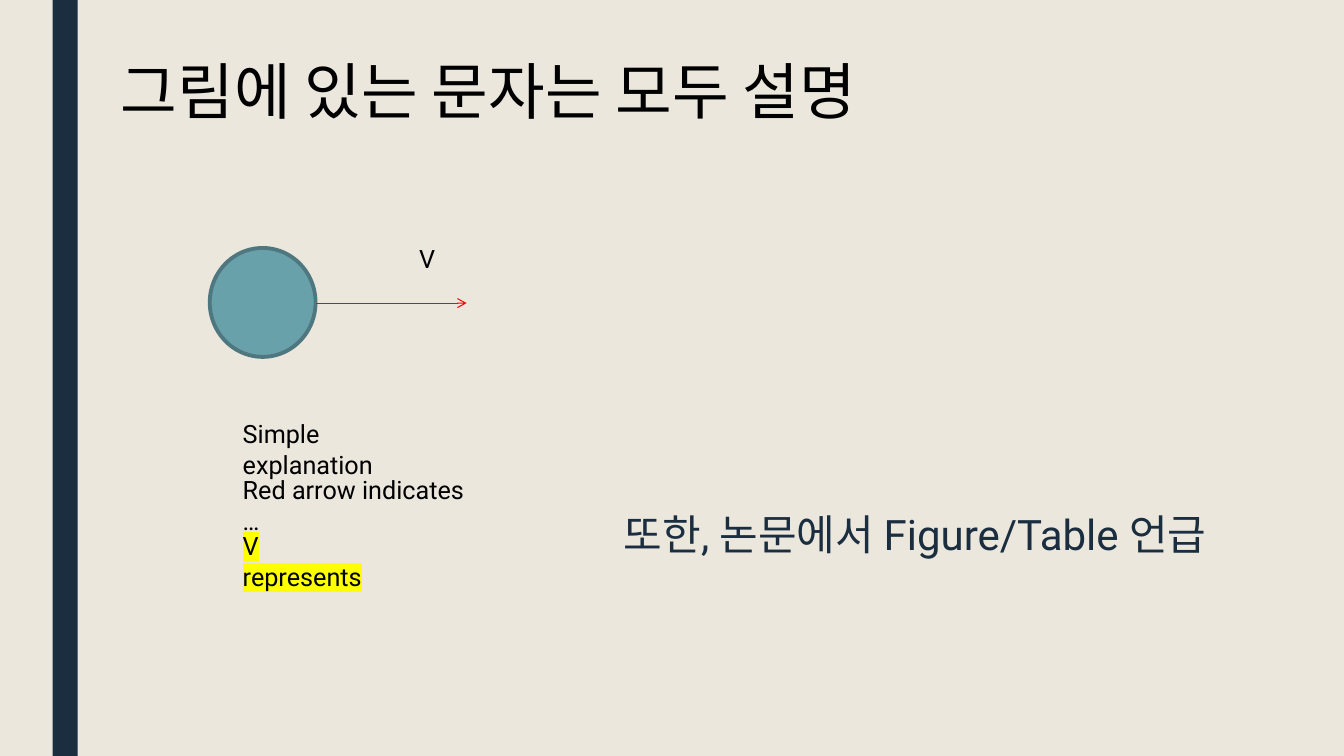
from dataclasses import dataclass

import pptx
import pptx.dml.color
import pptx.enum.shapes
import pptx.enum.text
import pptx.oxml
import pptx.oxml.ns
import pptx.util

Pt = pptx.util.Pt
ANCHOR = pptx.enum.text.MSO_ANCHOR
SHAPE = pptx.enum.shapes.MSO_SHAPE


@dataclass(frozen=True)
class Theme:
    font: str = "Roboto"
    background: str = "EBE7DD"
    navy: str = "1A2E40"
    ink: str = "000000"
    ball: str = "69A1AB"
    ball_edge: str = "4E777F"
    arrow: str = "FF0000"
    highlight: str = "FFFF00"
    heading_size: float = 44
    remark_size: float = 30
    label_size: float = 18


THEME = Theme()


def rgb(value):
    return pptx.dml.color.RGBColor.from_string(value)


def element(tag, content=""):
    return pptx.oxml.parse_xml(
        f"<a:{tag} {pptx.oxml.ns.nsdecls('a')}>{content}</a:{tag}>"
    )


def write(holder, text, size, color, anchor=ANCHOR.TOP, spacing=1.0):
    frame = holder.text_frame
    frame.text = text
    frame.word_wrap = True
    frame.auto_size = pptx.enum.text.MSO_AUTO_SIZE.NONE
    frame.vertical_anchor = anchor
    paragraph = frame.paragraphs[0]
    paragraph.alignment = pptx.enum.text.PP_ALIGN.LEFT
    paragraph.line_spacing = spacing
    run = paragraph.runs[0]
    run.font.name = THEME.font
    run.font.size = Pt(size)
    run.font.color.rgb = rgb(color)
    return run


def add_heading(slide, text):
    heading = slide.shapes.title
    heading.left, heading.top = Pt(79.2), Pt(15.1)
    heading.width, heading.height = Pt(828), Pt(104.4)
    write(heading, text, THEME.heading_size, THEME.ink, ANCHOR.MIDDLE, 0.9)


def add_text(slide, text, left, top, width, height=28.8,
             size=THEME.label_size, color=THEME.ink, spacing=1.0):
    label = slide.shapes.add_textbox(Pt(left), Pt(top), Pt(width), Pt(height))
    return write(label, text, size, color, spacing=spacing)


def highlight(run):
    color = element("highlight", f'<a:srgbClr val="{THEME.highlight}"/>')
    fill = run.font._element.find(pptx.oxml.ns.qn("a:solidFill"))
    fill.addnext(color)


def add_filled(slide, kind, left, top, width, height, fill, edge=None):
    figure = slide.shapes.add_shape(kind, Pt(left), Pt(top), Pt(width), Pt(height))
    figure.shadow.inherit = False
    figure.fill.solid()
    figure.fill.fore_color.rgb = rgb(fill)
    if edge:
        figure.line.color.rgb = rgb(edge)
        figure.line.width = Pt(2.75)
    else:
        figure.line.fill.background()


def add_arrow(slide, start, end, y):
    arrow = slide.shapes.add_connector(
        pptx.enum.shapes.MSO_CONNECTOR.STRAIGHT, Pt(start), Pt(y), Pt(end), Pt(y)
    )
    arrow.line.color.rgb = rgb(THEME.arrow)
    arrow.line.width = Pt(0.75)
    head = element("tailEnd")
    head.set("type", "arrow")
    arrow.line._get_or_add_ln().append(head)
    arrow._element.spPr.append(element("effectLst"))


def add_explanations(slide):
    explanations = (
        ("Simple explanation", 155.5),
        ("Red arrow indicates …", 177),
        ("V represents", 108),
    )
    for row, (text, width) in enumerate(explanations):
        explanation = add_text(slide, text, 166.3, 295.5 + 40 * row, width)
    highlight(explanation)


def main():
    deck = pptx.Presentation()
    deck.slide_width, deck.slide_height = Pt(960), Pt(540)
    slide = deck.slides.add_slide(deck.slide_layouts.get_by_name("Title Only"))
    slide.background.fill.solid()
    slide.background.fill.fore_color.rgb = rgb(THEME.background)

    add_filled(slide, SHAPE.RECTANGLE, 37.5, 0, 18, 540, THEME.navy)
    add_heading(slide, "그림에 있는 문자는 모두 설명")
    add_filled(slide, SHAPE.OVAL, 149.8, 177.1, 75.6, 77.8,
               THEME.ball, THEME.ball_edge)
    add_arrow(slide, 225.4, 333.4, 216.5)
    add_text(slide, "V", 292.3, 170.6, 25.2)
    add_explanations(slide)
    add_text(slide, "또한, 논문에서 Figure/Table 언급", 438.5, 364.3, 496, 116.6,
             THEME.remark_size, THEME.navy, 0.89)
    deck.save("out.pptx")


if __name__ == "__main__":
    main()
